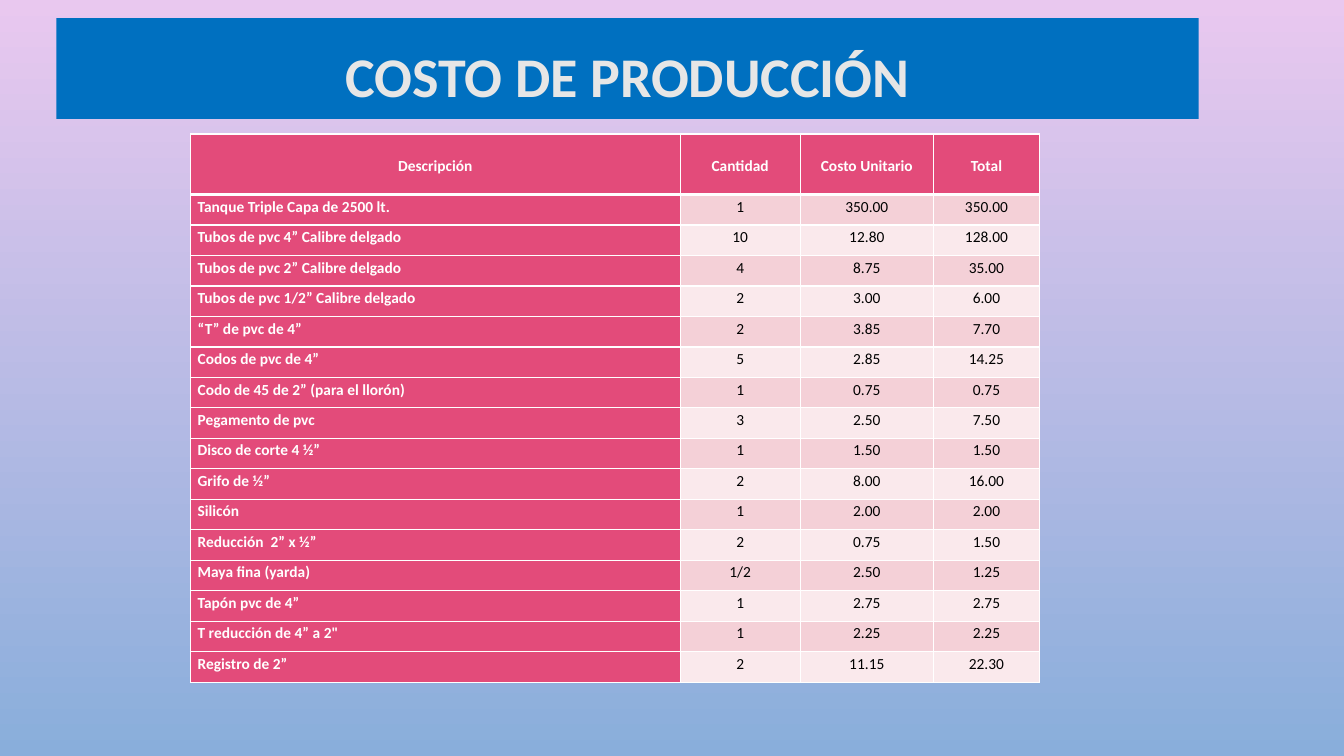
from dataclasses import dataclass

from lxml.etree import SubElement
from pptx import Presentation
from pptx.dml.color import RGBColor
from pptx.enum.shapes import MSO_SHAPE
from pptx.enum.text import MSO_ANCHOR, PP_ALIGN
from pptx.oxml.ns import qn
from pptx.util import Inches, Pt


@dataclass(frozen=True)
class Theme:
    font: str = "Calibri"
    title_size: int = 40
    table_size: int = 11
    sky_top: str = "E9C8EF"
    sky_bottom: str = "89AEDB"
    banner: str = "0070C0"
    title: str = "E6E6E6"
    accent: str = "E34B7A"
    band_dark: str = "F4D0D7"
    band_light: str = "FAE9EC"
    light: str = "FFFFFF"
    dark: str = "000000"


THEME = Theme()
COL_WIDTHS = (4.85, 1.19, 1.32, 1.05)
HEADER_HEIGHT = 0.6
HEADER = ("Descripción", "Cantidad", "Costo Unitario", "Total")
COSTS = (
    ("Tanque Triple Capa de 2500 lt.", "1", "350.00", "350.00"),
    ("Tubos de pvc 4” Calibre delgado", "10", "12.80", "128.00"),
    ("Tubos de pvc 2” Calibre delgado", "4", "8.75", "35.00"),
    ("Tubos de pvc 1/2” Calibre delgado", "2", "3.00", "6.00"),
    ("“T” de pvc de 4”", "2", "3.85", "7.70"),
    ("Codos de pvc de 4”", "5", "2.85", "14.25"),
    ("Codo de 45 de 2” (para el llorón)", "1", "0.75", "0.75"),
    ("Pegamento de pvc", "3", "2.50", "7.50"),
    ("Disco de corte 4 ½”", "1", "1.50", "1.50"),
    ("Grifo de ½”", "2", "8.00", "16.00"),
    ("Silicón", "1", "2.00", "2.00"),
    ("Reducción  2” x ½”", "2", "0.75", "1.50"),
    ("Maya fina (yarda)", "1/2", "2.50", "1.25"),
    ("Tapón pvc de 4”", "1", "2.75", "2.75"),
    ("T reducción de 4” a 2\"", "1", "2.25", "2.25"),
    ("Registro de 2”", "2", "11.15", "22.30"),
)


def rgb(color):
    return RGBColor.from_string(color)


def write(tf, text, size, color, bold, align, spacing):
    tf.text = text
    p = tf.paragraphs[0]
    p.alignment = align
    p.line_spacing = spacing
    font = p.runs[0].font
    font.name = THEME.font
    font.size = Pt(size)
    font.bold = bold
    font.color.rgb = rgb(color)


def set_borders(cell, top, bottom):
    """Draw white cell borders; top and bottom are widths in points."""
    tc_pr = cell._tc.get_or_add_tcPr()
    widths = {"a:lnL": 1, "a:lnR": 1, "a:lnT": top, "a:lnB": bottom}
    for i, (tag, width) in enumerate(widths.items()):
        ln = SubElement(tc_pr, qn(tag), w=str(Pt(width)))
        fill = SubElement(ln, qn("a:solidFill"))
        SubElement(fill, qn("a:srgbClr"), val=THEME.light)
        tc_pr.insert(i, ln)


def paint_background(s):
    fill = s.background.fill
    fill.gradient()
    fill.gradient_angle = 270
    for stop, color in zip(fill.gradient_stops, (THEME.sky_top, THEME.sky_bottom)):
        stop.color.rgb = rgb(color)
    fill.gradient_stops[0].position = 0
    fill.gradient_stops[1].position = 1


def add_banner(s, left, top, width, height):
    sp = s.shapes.add_shape(MSO_SHAPE.RECTANGLE, Inches(left), Inches(top),
                            Inches(width), Inches(height))
    sp.shadow.inherit = False
    sp.fill.solid()
    sp.fill.fore_color.rgb = rgb(THEME.banner)
    sp.line.fill.background()
    tf = sp.text_frame
    tf.word_wrap = True
    tf.vertical_anchor = MSO_ANCHOR.MIDDLE
    tf.margin_top = Inches(0.26)
    tf.margin_bottom = Inches(0.05)
    write(tf, "COSTO DE PRODUCCIÓN", THEME.title_size, THEME.title, True,
          PP_ALIGN.CENTER, 0.9)


def fill_cell(cell, text, row, col):
    is_header = row == 0
    on_accent = is_header or col == 0
    band = THEME.band_dark if row % 2 else THEME.band_light
    cell.fill.solid()
    cell.fill.fore_color.rgb = rgb(THEME.accent if on_accent else band)
    cell.margin_left = cell.margin_right = Inches(0.07)
    cell.margin_top = cell.margin_bottom = 0
    cell.vertical_anchor = MSO_ANCHOR.MIDDLE if is_header else MSO_ANCHOR.TOP
    align = PP_ALIGN.JUSTIFY if col == 0 and not is_header else PP_ALIGN.CENTER
    write(cell.text_frame, text, THEME.table_size,
          THEME.light if on_accent else THEME.dark, on_accent, align, 1.15)
    set_borders(cell, top=3 if row == 1 else 1, bottom=3 if is_header else 1)


def add_cost_table(s, left, top, width, height):
    rows = (HEADER, *COSTS)
    table = s.shapes.add_table(len(rows), len(HEADER), Inches(left), Inches(top),
                               Inches(width), Inches(height)).table
    for column, share in zip(table.columns, COL_WIDTHS):
        column.width = Inches(width * share / sum(COL_WIDTHS))
    row_height = (height - HEADER_HEIGHT) / len(COSTS)
    for i, values in enumerate(rows):
        table.rows[i].height = Inches(row_height if i else HEADER_HEIGHT)
        for j, text in enumerate(values):
            fill_cell(table.cell(i, j), text, i, j)


def main():
    prs = Presentation()
    prs.slide_width = Inches(13.33)
    prs.slide_height = Inches(7.5)
    s = prs.slides.add_slide(prs.slide_layouts[6])
    paint_background(s)
    add_banner(s, 0.56, 0.18, 11.33, 1)
    add_cost_table(s, 1.89, 1.33, 8.42, 5.44)
    prs.save("out.pptx")


if __name__ == "__main__":
    main()
